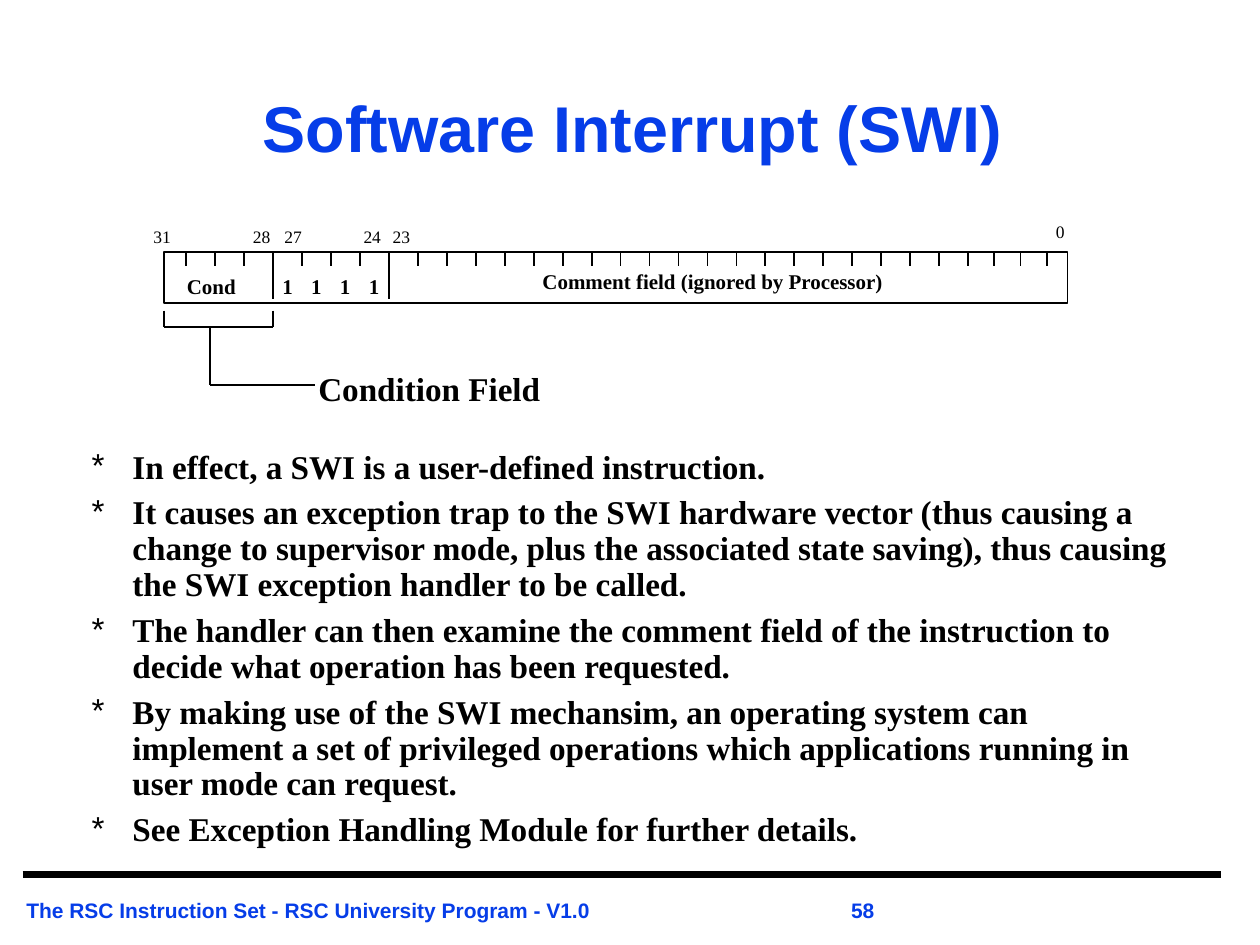
from lxml.etree import SubElement
from pptx import Presentation
from pptx.dml.color import RGBColor
from pptx.enum.shapes import MSO_CONNECTOR, MSO_SHAPE
from pptx.enum.text import MSO_ANCHOR, PP_ALIGN
from pptx.oxml.ns import qn
from pptx.util import Pt

COLORS = {"blue": "063DE8", "black": "000000"}
SERIF, SANS = "Times New Roman", "Arial"

deck = Presentation()
deck.slide_width, deck.slide_height = Pt(720.72), Pt(540.72)
page = deck.slides.add_slide(deck.slide_layouts[5])


def add_line(x1, y1, x2, y2, weight=1):
    line = page.shapes.add_connector(
        MSO_CONNECTOR.STRAIGHT, Pt(x1), Pt(y1), Pt(x2), Pt(y2))
    line.line.color.rgb = RGBColor.from_string(COLORS["black"])
    line.line.width = Pt(weight)
    SubElement(line._element.spPr, qn("a:effectLst"))


def add_text(text, left, top, width, height, size, bold=True, font=SERIF,
             color="black", spacing=1.04, tabs=(), tab_kind="l", wrap=True):
    box = page.shapes.add_textbox(Pt(left), Pt(top), Pt(width), Pt(height))
    frame = box.text_frame
    frame.word_wrap = wrap
    frame.margin_left = frame.margin_right = Pt(5)
    frame.margin_top = frame.margin_bottom = Pt(2.2)
    para = frame.paragraphs[0]
    para.text = text
    para.line_spacing = spacing
    if tabs:
        tab_list = SubElement(para._p.get_or_add_pPr(), qn("a:tabLst"))
        for position in tabs:
            SubElement(tab_list, qn("a:tab"), pos=str(Pt(position)), algn=tab_kind)
    para.font.name, para.font.size, para.font.bold = font, Pt(size), bold
    para.font.color.rgb = RGBColor.from_string(COLORS[color])
    return para


# Footer
add_line(13, 500.4, 698.4, 500.4, 3.75)
add_text("The RSC Instruction Set - RSC University Program - V1.0\t58",
         10.1, 509, 709, 21, 12, font=SANS, color="blue", spacing=1.18, tabs=[471.7])

# Title
title = page.shapes.title
title.left, title.top, title.width, title.height = Pt(76.3), Pt(28.8), Pt(571), Pt(92.9)
title.text_frame.vertical_anchor = MSO_ANCHOR.MIDDLE
para = title.text_frame.paragraphs[0]
para.text = "Software Interrupt (SWI)"
para.alignment = PP_ALIGN.CENTER
para.line_spacing = 0.9
para.font.name, para.font.size, para.font.bold = SANS, Pt(37), True
para.font.color.rgb = RGBColor.from_string(COLORS["blue"])

# Explanation bullets
points = [
    "In effect, a SWI is a user-defined instruction.",
    "It causes an exception trap to the SWI hardware vector (thus causing a change "
    "to supervisor mode, plus the associated state saving), thus causing the SWI "
    "exception handler to be called.",
    "The handler can then examine the comment field of the instruction to decide "
    "what operation has been requested.",
    "By making use of the SWI mechansim, an operating system can implement a set of "
    "privileged operations which applications running in user mode can request.",
    "See Exception Handling Module for further details.",
]
body = page.shapes.add_textbox(Pt(45.4), Pt(254.2), Pt(631.4), Pt(228.2)).text_frame
body.word_wrap = True
for index, point in enumerate(points):
    para = body.add_paragraph() if index else body.paragraphs[0]
    para.text = point
    properties = para._p.get_or_add_pPr()
    properties.set("marL", str(Pt(23.3)))
    properties.set("indent", str(Pt(-23.3)))
    SubElement(properties, qn("a:buFont"), typeface=SANS)
    SubElement(properties, qn("a:buChar"), char="*")
    para.line_spacing = 0.9
    if index:
        para.space_before = Pt(5.7)
    para.font.name, para.font.size, para.font.bold = SERIF, Pt(19), True
    para.font.color.rgb = RGBColor.from_string(COLORS["black"])

# Instruction word with bit ticks; the last three bits are narrower
WORD_LEFT, WORD_TOP = 93.6, 144
word = page.shapes.add_shape(
    MSO_SHAPE.RECTANGLE, Pt(WORD_LEFT), Pt(WORD_TOP), Pt(517), Pt(29.5))
word.shadow.inherit = False
word.fill.background()
word.line.color.rgb = RGBColor.from_string(COLORS["black"])
word.line.width = Pt(1)

ticks = [106.6 + 16.56 * bit for bit in range(28)]
ticks += [ticks[-1] + 15 * step for step in (1, 2, 3)]
for bit, x in enumerate(ticks):
    depth = 27 if bit in (3, 7) else 8
    add_line(x, WORD_TOP, x, WORD_TOP + depth)

# Bit numbers
for number, left, top in [("31", 82.8, 127.4), ("28", 139.7, 127.4),
                          ("27", 157.7, 127.4), ("24", 203, 127.4),
                          ("23", 219.6, 127.4), ("0", 599, 124.2)]:
    add_text(number, left, top, 20 if len(number) == 2 else 15, 16.5, 10,
             bold=False, spacing=1, wrap=False)

# Field contents
add_text("Cond\t1\t1\t1\t1", 101.9, 153.5, 130, 19.4, 12,
         tabs=[57.6 + 16.5 * bit for bit in range(4)], tab_kind="ctr")
comment = add_text("Comment field (ignored by Processor)", 222.5, 151, 370.5, 19.4, 12)
comment.alignment = PP_ALIGN.CENTER

# Condition field bracket and label
for x in (WORD_LEFT, ticks[3]):
    add_line(x, 177.8, x, 187.2)
add_line(WORD_LEFT, 187.2, ticks[3], 187.2)
add_line(120.2, 187.2, 120.2, 220.3)
add_line(120.2, 220.3, 180, 220.3)
add_text("Condition Field", 177.1, 208.1, 187.2, 27.4, 19, spacing=1.02)

deck.save("out.pptx")
